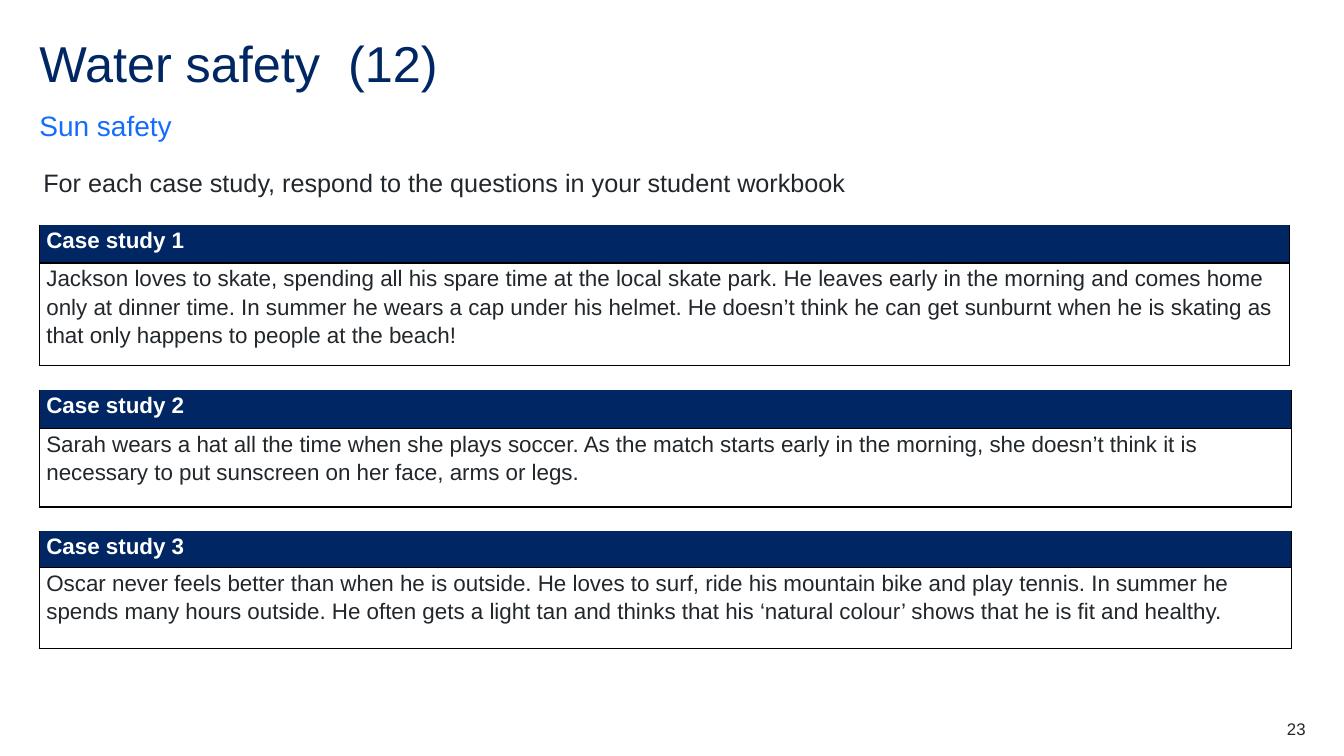
"""Build the sun safety case study slide."""
import dataclasses

import pptx
import pptx.dml.color
import pptx.enum.text
import pptx.oxml
import pptx.oxml.ns
import pptx.util

TITLE = "Water safety  (12)"
SUBTITLE = "Sun safety"
INSTRUCTION = "For each case study, respond to the questions in your student workbook"
PAGE_NUMBER = "23"
CASE_STUDIES = [
    ("Case study 1",
     "Jackson loves to skate, spending all his spare time at the local skate park. "
     "He leaves early in the morning and comes home only at dinner time. In summer he "
     "wears a cap under his helmet. He doesn’t think he can get sunburnt when he is "
     "skating as that only happens to people at the beach!", 12.4, (0.38, 1.02)),
    ("Case study 2",
     "Sarah wears a hat all the time when she plays soccer. As the match starts early "
     "in the morning, she doesn’t think it is necessary to put sunscreen on her face, "
     "arms or legs.", 12.42, (0.38, 0.78)),
    ("Case study 3",
     "Oscar never feels better than when he is outside. He loves to surf, ride his "
     "mountain bike and play tennis. In summer he spends many hours outside. He often "
     "gets a light tan and thinks that his ‘natural colour’ shows that he is fit and "
     "healthy.", 12.42, (0.36, 0.8)),
]

SLIDE_WIDTH, SLIDE_HEIGHT = 13.33, 7.5
MARGIN = 0.39
CONTENT_WIDTH = 12.56
TABLES_TOP, TABLE_GAP = 2.23, 0.24
NUMBER_WIDTH = 0.79


@dataclasses.dataclass(frozen=True)
class Theme:
    font: str = "Arial"
    navy: str = "002664"
    blue: str = "146CFD"
    text: str = "22272B"
    white: str = "FFFFFF"
    border: str = "000000"
    title_size: int = 36
    subtitle_size: int = 20
    instruction_size: int = 18
    case_size: int = 16
    number_size: int = 12


THEME = Theme()


def style_paragraph(paragraph, size, color, bold=False, line_spacing=1.0, after=0):
    paragraph.line_spacing = line_spacing
    paragraph.space_before = pptx.util.Pt(0)
    paragraph.space_after = pptx.util.Pt(after)
    font = paragraph.font
    font.name, font.size, font.bold = THEME.font, pptx.util.Pt(size), bold
    font.color.rgb = pptx.dml.color.RGBColor.from_string(color)


def place(shape, left, top, width, height):
    shape.left, shape.top, shape.width, shape.height = (
        pptx.util.Inches(length) for length in (left, top, width, height))


def fill_frame(frame, text, anchor, insets=(0, 0, 0, 0)):
    frame.text = text
    frame.word_wrap = True
    frame.auto_size = pptx.enum.text.MSO_AUTO_SIZE.NONE
    frame.vertical_anchor = anchor
    frame.margin_left, frame.margin_top, frame.margin_right, frame.margin_bottom = (
        pptx.util.Inches(inset) for inset in insets)
    return frame.paragraphs[0]


def set_borders(cell, visible_sides):
    properties = cell._tc.get_or_add_tcPr()
    namespace = pptx.oxml.ns.nsdecls("a")
    for position, side in enumerate("LRTB"):
        paint = (f'<a:solidFill><a:srgbClr val="{THEME.border}"/></a:solidFill>'
                 if side in visible_sides else "<a:noFill/>")
        properties.insert(position, pptx.oxml.parse_xml(
            f'<a:ln{side} {namespace} w="{pptx.util.Pt(1)}">{paint}</a:ln{side}>'))


def add_case_study(slide, top, heading, story, width, row_heights):
    table = slide.shapes.add_table(
        2, 1, *(pptx.util.Inches(length)
                for length in (MARGIN, top, width, sum(row_heights)))).table
    table.first_row = table.horz_banding = False
    rows = [(heading, THEME.white, True, "LRB"), (story, THEME.text, False, "LRTB")]
    for index, (text, color, bold, sides) in enumerate(rows):
        table.rows[index].height = pptx.util.Inches(row_heights[index])
        cell = table.cell(index, 0)
        cell.text = text
        cell.margin_left = cell.margin_right = pptx.util.Inches(0.07)
        cell.margin_top = cell.margin_bottom = 0
        cell.fill.solid()
        cell.fill.fore_color.rgb = pptx.dml.color.RGBColor.from_string(
            THEME.navy if bold else THEME.white)
        set_borders(cell, sides)
        style_paragraph(cell.text_frame.paragraphs[0], THEME.case_size, color,
                        bold, 1.14, 6)


def main():
    presentation = pptx.Presentation()
    presentation.slide_width = pptx.util.Inches(SLIDE_WIDTH)
    presentation.slide_height = pptx.util.Inches(SLIDE_HEIGHT)
    slide = presentation.slides.add_slide(presentation.slide_layouts[1])
    anchors = pptx.enum.text.MSO_ANCHOR
    alignments = pptx.enum.text.PP_ALIGN

    title = slide.shapes.title
    place(title, MARGIN, 0.39, CONTENT_WIDTH, 0.6)
    paragraph = fill_frame(title.text_frame, TITLE, anchors.TOP)
    paragraph.alignment = alignments.LEFT
    style_paragraph(paragraph, THEME.title_size, THEME.navy, line_spacing=0.9)

    subtitle = slide.placeholders[1]
    place(subtitle, MARGIN, 1.07, CONTENT_WIDTH, 0.34)
    paragraph = fill_frame(subtitle.text_frame, SUBTITLE, anchors.BOTTOM)
    properties = paragraph._p.get_or_add_pPr()
    properties.set("marL", "0")
    properties.set("indent", "0")
    properties.append(pptx.oxml.parse_xml(f'<a:buNone {pptx.oxml.ns.nsdecls("a")}/>'))
    style_paragraph(paragraph, THEME.subtitle_size, THEME.blue,
                    line_spacing=1.5, after=12)

    instruction = slide.shapes.add_textbox(0, 0, 0, 0)
    place(instruction, MARGIN, 1.61, CONTENT_WIDTH, 0.4)
    paragraph = fill_frame(instruction.text_frame, INSTRUCTION, anchors.TOP,
                           (0.04, 0.05, 0.1, 0.05))
    style_paragraph(paragraph, THEME.instruction_size, THEME.text)

    top = TABLES_TOP
    for heading, story, width, row_heights in CASE_STUDIES:
        add_case_study(slide, top, heading, story, width, row_heights)
        top += sum(row_heights) + TABLE_GAP

    number = slide.shapes.add_textbox(0, 0, 0, 0)
    place(number, MARGIN + CONTENT_WIDTH - NUMBER_WIDTH, 7.13, NUMBER_WIDTH, 0.2)
    paragraph = fill_frame(number.text_frame, PAGE_NUMBER, anchors.TOP)
    paragraph.alignment = alignments.RIGHT
    style_paragraph(paragraph, THEME.number_size, THEME.text)

    presentation.save("out.pptx")


if __name__ == "__main__":
    main()
